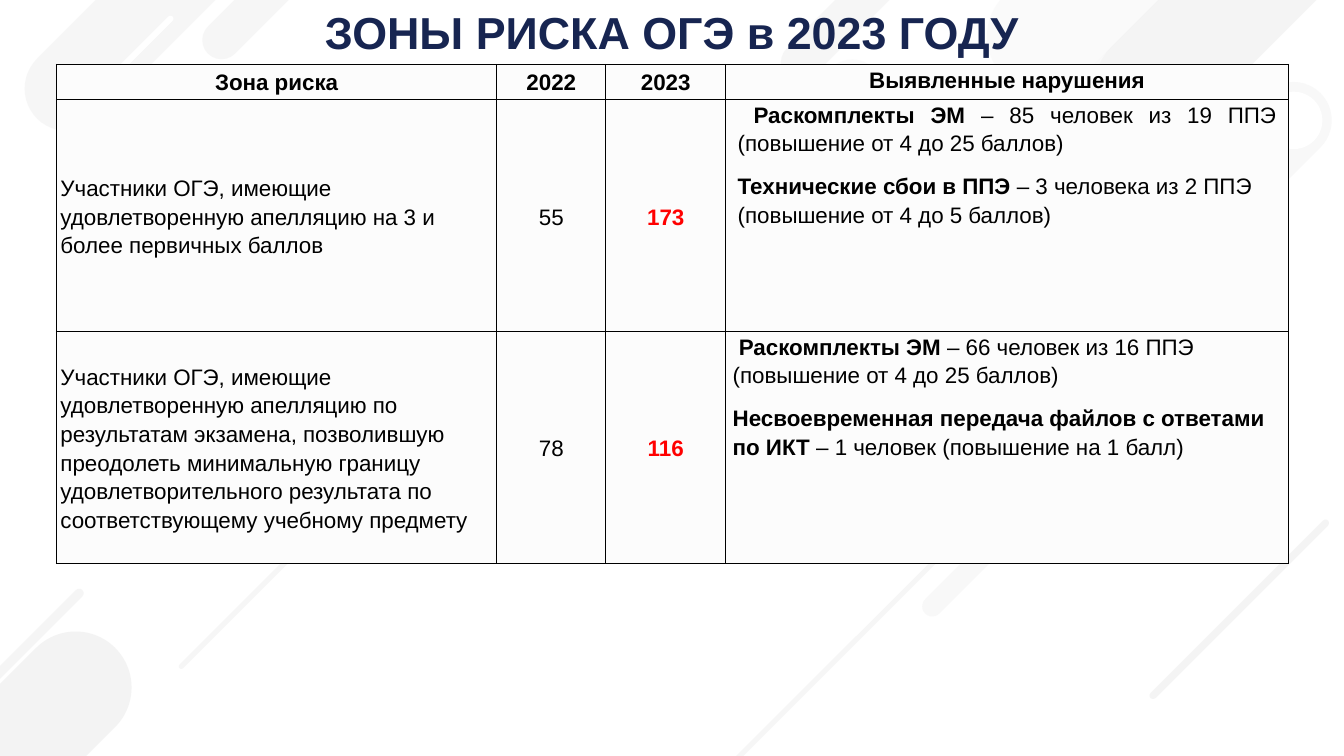
from dataclasses import dataclass

from lxml.etree import SubElement
from pptx import Presentation
from pptx.dml.color import RGBColor
from pptx.enum.shapes import MSO_SHAPE as Preset
from pptx.enum.text import MSO_ANCHOR as Anchor, PP_ALIGN as Align
from pptx.oxml.ns import qn
from pptx.util import Pt


@dataclass(frozen=True)
class Theme:
    """Colours, font and type sizes of the slide."""
    title: str = "172551"
    ink: str = "000000"
    alert: str = "FF0000"
    cell: str = "FCFCFC"
    pill: str = "F2F2F2"
    streak: str = "D9D9D9"
    paper: str = "FFFFFF"
    font: str = "Arial"
    title_size: int = 32
    body_size: int = 16


THEME = Theme()
SLIDE_BOX = (0, 0, 960, 540)
TITLE_BOX = (0, 0, 960, 46)
TABLE_BOX = (40.3, 46.1, 880, 356.2)

PILLS = [
    (-4.3, 443.5, 79.9, 131.8, THEME.pill, 85),
    (20.2, 406.8, 6.5, 100.1, THEME.pill, 72),
    (182.2, 342.7, 3.6, 157.7, THEME.streak, 22),
    (596.9, 319.7, 3.6, 300.2, THEME.streak, 22),
    (830.2, -207.4, 79.9, 442.1, THEME.pill, 42),
    (873.4, 49, 54.7, 120.2, THEME.pill, 51),
    (910.1, -287.3, 79.9, 442.1, THEME.pill, 59),
    (833, -323.3, 79.9, 442.1, THEME.pill, 32),
    (760.3, 180.7, 14.4, 301.7, THEME.pill, 52),
    (555.8, 29.5, 43.2, 131.8, THEME.pill, 37),
    (594.7, -58.3, 27.4, 131.8, THEME.pill, 65),
    (181.4, -74.2, 27.4, 131.8, THEME.pill, 65),
    (69.8, -92.9, 60.5, 208.1, THEME.pill, 65),
    (49, -18, 4.3, 203.8, THEME.paper, 100),
    (882.7, 345.6, 5, 179.3, THEME.pill, 82),
]
RING_HOLE = (903.6, 65.5, 41, 41, THEME.paper, 100)

HEADINGS = ["Зона риска", "2022", "2023", "Выявленные нарушения"]
COLUMN_WIDTHS = [314.6, 77.8, 85.7, 401.9]
HEADER_HEIGHT = 25
RISKS = [
    ("Участники ОГЭ, имеющие удовлетворенную апелляцию на 3 и более первичных баллов",
     "55", "173", 8.6, Align.JUSTIFY,
     [[(" Раскомплекты ЭМ ", True),
       ("– 85 человек из 19 ППЭ (повышение от 4 до 25 баллов)", False)],
      [("Технические сбои в ППЭ ", True),
       ("– 3 человека из 2 ППЭ (повышение от 4 до 5 баллов)", False)]]),
    ("Участники ОГЭ, имеющие удовлетворенную апелляцию по результатам экзамена, "
     "позволившую преодолеть минимальную границу удовлетворительного результата "
     "по соответствующему учебному предмету",
     "78", "116", 5, Align.LEFT,
     [[(" Раскомплекты ЭМ ", True),
       ("– 66 человек из 16 ППЭ (повышение от 4 до 25 баллов)", False)],
      [("Несвоевременная передача файлов с ответами по ИКТ ", True),
       ("– 1 человек (повышение на 1 балл)", False)]]),
]


def add_run(paragraph, text, size, color, bold):
    """Add one styled run to a paragraph."""
    run = paragraph.add_run()
    run.text = text
    run.font.name = THEME.font
    run.font.size = Pt(size)
    run.font.bold = bold
    run.font.color.rgb = RGBColor.from_string(color)


def add_decor(slide, box, preset, left, top, width, height, color, opacity):
    """Add one borderless background shape, placed relative to the box."""
    decor = slide.shapes.add_shape(
        preset, Pt(box[0] + left), Pt(box[1] + top), Pt(width), Pt(height))
    decor.shadow.inherit = False
    decor.line.fill.background()
    decor.fill.solid()
    decor.fill.fore_color.rgb = RGBColor.from_string(color)
    if opacity < 100:
        tint = decor._element.spPr.find(qn("a:solidFill"))[0]
        SubElement(tint, qn("a:alpha")).set("val", str(opacity * 1000))
    return decor


def draw_background(slide, box):
    """Scatter the slanted pills and the hole of the ring."""
    for pill_spec in PILLS:
        pill = add_decor(slide, box, Preset.ROUNDED_RECTANGLE, *pill_spec)
        pill.adjustments[0] = 0.5
        pill.rotation = 45
    add_decor(slide, box, Preset.OVAL, *RING_HOLE)


def draw_title(slide, box):
    """Write the centred slide title."""
    title = slide.shapes.add_textbox(*map(Pt, box)).text_frame
    title.word_wrap = True
    heading = title.paragraphs[0]
    heading.alignment = Align.CENTER
    add_run(heading, "ЗОНЫ РИСКА ОГЭ в 2023 ГОДУ", THEME.title_size, THEME.title, True)


def fill_cell(cell, paragraphs, align, anchor, color=THEME.ink, indent=None):
    """Style a cell and write its paragraphs run by run."""
    inset_x, inset_y = (2.9, 1.4) if indent is None else (0, 0)
    cell.margin_left = cell.margin_right = Pt(inset_x)
    cell.margin_top = cell.margin_bottom = Pt(inset_y)
    cell.vertical_anchor = anchor
    properties = cell._tc.get_or_add_tcPr()
    for side in ("lnL", "lnR", "lnT", "lnB"):
        border = SubElement(properties, qn(f"a:{side}"), w=str(Pt(1)))
        ink = SubElement(border, qn("a:solidFill"))
        SubElement(ink, qn("a:srgbClr"), val=THEME.ink)
    cell.fill.solid()
    cell.fill.fore_color.rgb = RGBColor.from_string(THEME.cell)
    for index, runs in enumerate(paragraphs):
        frame = cell.text_frame
        paragraph = frame.add_paragraph() if index else frame.paragraphs[0]
        paragraph.alignment = Align.LEFT if index else align
        paragraph.line_spacing = 1.15
        paragraph.space_after = Pt(10)
        if indent is not None:
            for margin in ("marL", "marR"):
                paragraph._p.get_or_add_pPr().set(margin, str(Pt(indent)))
        for text, bold in runs:
            add_run(paragraph, text, THEME.body_size, color, bold)


def draw_risk_table(slide, box):
    """Draw the table of risk zones inside the box."""
    table = slide.shapes.add_table(
        len(RISKS) + 1, len(HEADINGS), *map(Pt, box)).table
    table.first_row = table.horz_banding = False
    for column, width in zip(table.columns, COLUMN_WIDTHS):
        column.width = Pt(width)
    table.rows[0].height = Pt(HEADER_HEIGHT)
    for column, heading in enumerate(HEADINGS):
        indent = 5 if column == len(HEADINGS) - 1 else None
        fill_cell(table.cell(0, column), [[(heading, True)]],
                  Align.CENTER, Anchor.TOP, indent=indent)
    for row, (zone, before, after, indent, align, violations) in enumerate(RISKS, 1):
        table.rows[row].height = Pt((box[3] - HEADER_HEIGHT) / len(RISKS))
        fill_cell(table.cell(row, 0), [[(zone, False)]], Align.LEFT, Anchor.MIDDLE)
        fill_cell(table.cell(row, 1), [[(before, False)]], Align.CENTER, Anchor.MIDDLE)
        fill_cell(table.cell(row, 2), [[(after, True)]], Align.CENTER, Anchor.MIDDLE,
                  color=THEME.alert)
        fill_cell(table.cell(row, 3), violations, align, Anchor.TOP, indent=indent)


def main():
    """Build the slide and save it."""
    deck = Presentation()
    deck.slide_width, deck.slide_height = map(Pt, SLIDE_BOX[2:])
    slide = deck.slides.add_slide(deck.slide_layouts[6])
    draw_background(slide, SLIDE_BOX)
    draw_risk_table(slide, TABLE_BOX)
    draw_title(slide, TITLE_BOX)
    deck.save("out.pptx")


if __name__ == "__main__":
    main()
